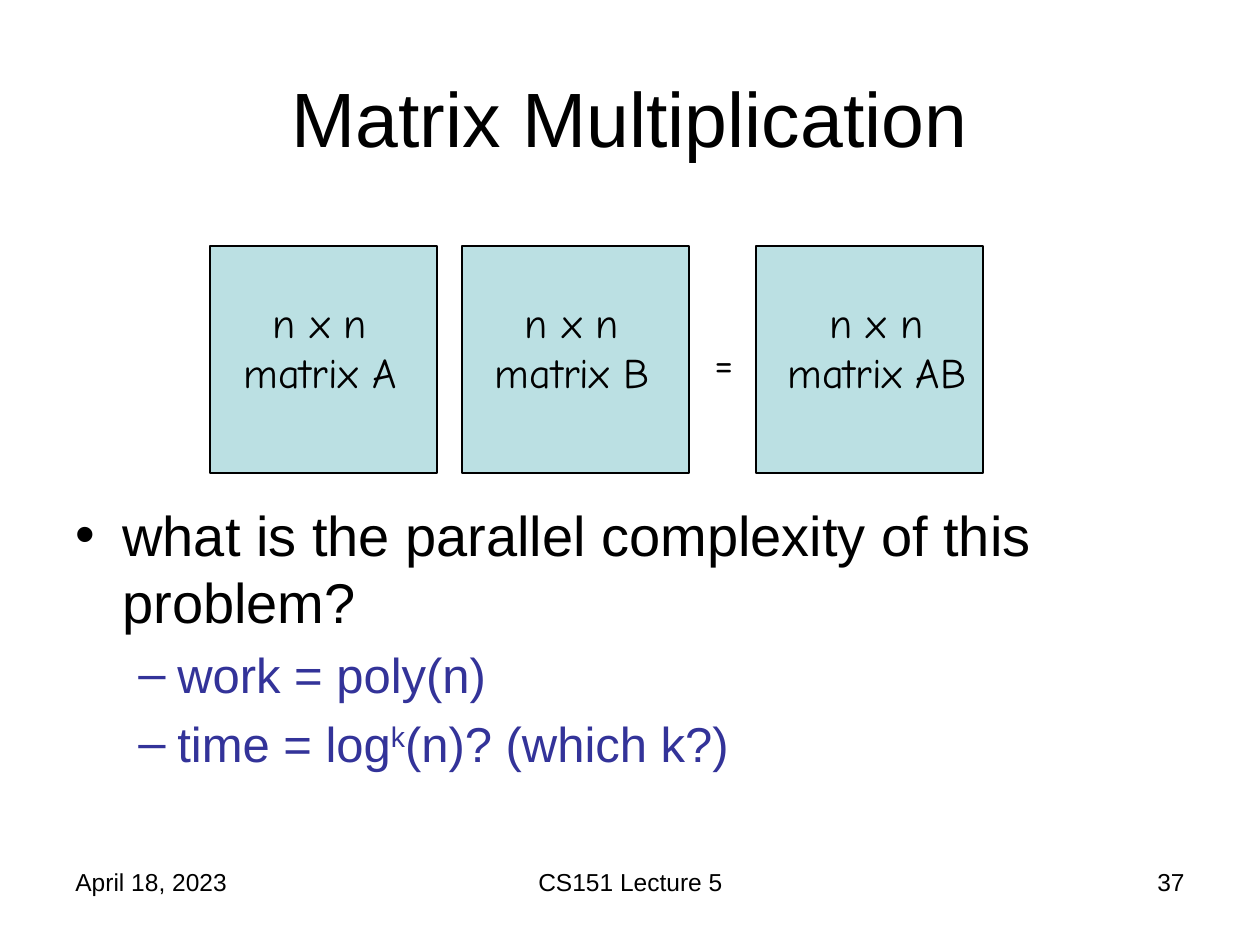
import pptx
import pptx.util
import pptx.dml.color
import pptx.enum.shapes
import pptx.enum.text
import pptx.oxml.ns
from lxml import etree
from dataclasses import dataclass

PX_PER_INCH = 126
ALIGN = pptx.enum.text.PP_ALIGN
ANCHOR = pptx.enum.text.MSO_ANCHOR


@dataclass(frozen=True)
class Theme:
    text: str = "000000"
    accent: str = "333399"
    matrix: str = "BBE0E3"
    main_font: str = "Arial"
    hand_font: str = "Comic Neue"
    title_size: int = 44
    body_size: int = 32
    sub_size: int = 28
    label_size: int = 24
    footer_size: int = 14
    outline: float = 0.75


THEME = Theme()


def px(length):
    return pptx.util.Emu(round(length * 914400 / PX_PER_INCH))


def rgb(code):
    return pptx.dml.color.RGBColor.from_string(code)


def place(shape, left, top, width, height):
    shape.left, shape.top = px(left), px(top)
    shape.width, shape.height = px(width), px(height)


def add_child(parent, tag, **attributes):
    return etree.SubElement(parent, pptx.oxml.ns.qn(tag), **attributes)


def write(paragraph, text, *, size, font=THEME.main_font, color=THEME.text,
          align=ALIGN.LEFT, superscript=False):
    """Append one formatted run to the paragraph."""
    paragraph.alignment = align
    run = paragraph.add_run()
    run.text = text
    run.font.size = pptx.util.Pt(size)
    run.font.name = font
    run.font.color.rgb = rgb(color)
    if superscript:
        run.font._element.set("baseline", "30000")


def space_before(paragraph, percent):
    """Set spacing relative to the line height, then return the properties."""
    properties = paragraph._p.get_or_add_pPr()
    spacing = add_child(properties, "a:spcBef")
    add_child(spacing, "a:spcPct", val=str(percent * 1000))
    return properties


def set_bullet(paragraph, mark, indent, hanging):
    properties = space_before(paragraph, 20)
    properties.set("marL", str(px(indent)))
    properties.set("indent", str(-px(hanging)))
    add_child(properties, "a:buFont", typeface=THEME.main_font)
    add_child(properties, "a:buChar", char=mark)


def add_text_frame(slide, *box):
    frame = slide.shapes.add_textbox(*map(px, box)).text_frame
    frame.word_wrap = True
    return frame


def add_title(slide, text):
    title = slide.shapes.title
    place(title, 63, 38, 1134, 158)
    frame = title.text_frame
    frame.auto_size = pptx.enum.text.MSO_AUTO_SIZE.NONE
    frame.vertical_anchor = ANCHOR.MIDDLE
    write(frame.paragraphs[0], text, size=THEME.title_size, align=ALIGN.CENTER)


def add_hand_label(slide, text, *box, align=ALIGN.CENTER, side_margin=12):
    frame = add_text_frame(slide, *box)
    frame.margin_left = frame.margin_right = px(side_margin)
    paragraph = frame.paragraphs[0]
    space_before(paragraph, 50)
    write(paragraph, text, size=THEME.label_size, font=THEME.hand_font, align=align)


def add_matrix(slide, name, left, label_left):
    square = slide.shapes.add_shape(
        pptx.enum.shapes.MSO_SHAPE.RECTANGLE, px(left), px(246), px(227), px(227))
    square.shadow.inherit = False
    square.fill.solid()
    square.fill.fore_color.rgb = rgb(THEME.matrix)
    square.line.color.rgb = rgb(THEME.text)
    square.line.width = pptx.util.Pt(THEME.outline)
    # Wider side margins keep "n x n" on a line of its own.
    add_hand_label(slide, f"n x n matrix {name}", label_left, 290, 242, 113,
                   side_margin=18)


def add_question(slide):
    frame = add_text_frame(slide, 63, 494, 1134, 350)
    question = frame.paragraphs[0]
    set_bullet(question, "•", 47, 47)
    write(question, "what is the parallel complexity of this problem?",
          size=THEME.body_size)

    bounds = [
        [("work = poly(n)", False)],
        [("time = log", False), ("k", True), ("(n)? (which k?)", False)],
    ]
    for pieces in bounds:
        bound = frame.add_paragraph()
        bound.level = 1
        set_bullet(bound, "–", 102, 39)
        for text, raised in pieces:
            write(bound, text, size=THEME.sub_size, color=THEME.accent,
                  superscript=raised)


def add_footer(slide):
    for text, left, width, align in [
        ("April 18, 2023", 63, 294, ALIGN.LEFT),
        ("CS151 Lecture 5", 431, 399, ALIGN.CENTER),
        ("37", 903, 294, ALIGN.RIGHT),
    ]:
        frame = add_text_frame(slide, left, 861, width, 66)
        write(frame.paragraphs[0], text, size=THEME.footer_size, align=align)


def main():
    deck = pptx.Presentation()
    deck.slide_width, deck.slide_height = px(1260), px(945)
    slide = deck.slides.add_slide(deck.slide_layouts.get_by_name("Title Only"))

    add_title(slide, "Matrix Multiplication")
    add_question(slide)
    for name, left, label_left in [("A", 210, 199), ("B", 462, 451), ("AB", 756, 756)]:
        add_matrix(slide, name, left, label_left)
    add_hand_label(slide, "=", 703, 330, 53, 63, align=ALIGN.LEFT)
    add_footer(slide)

    deck.save("out.pptx")


if __name__ == "__main__":
    main()
